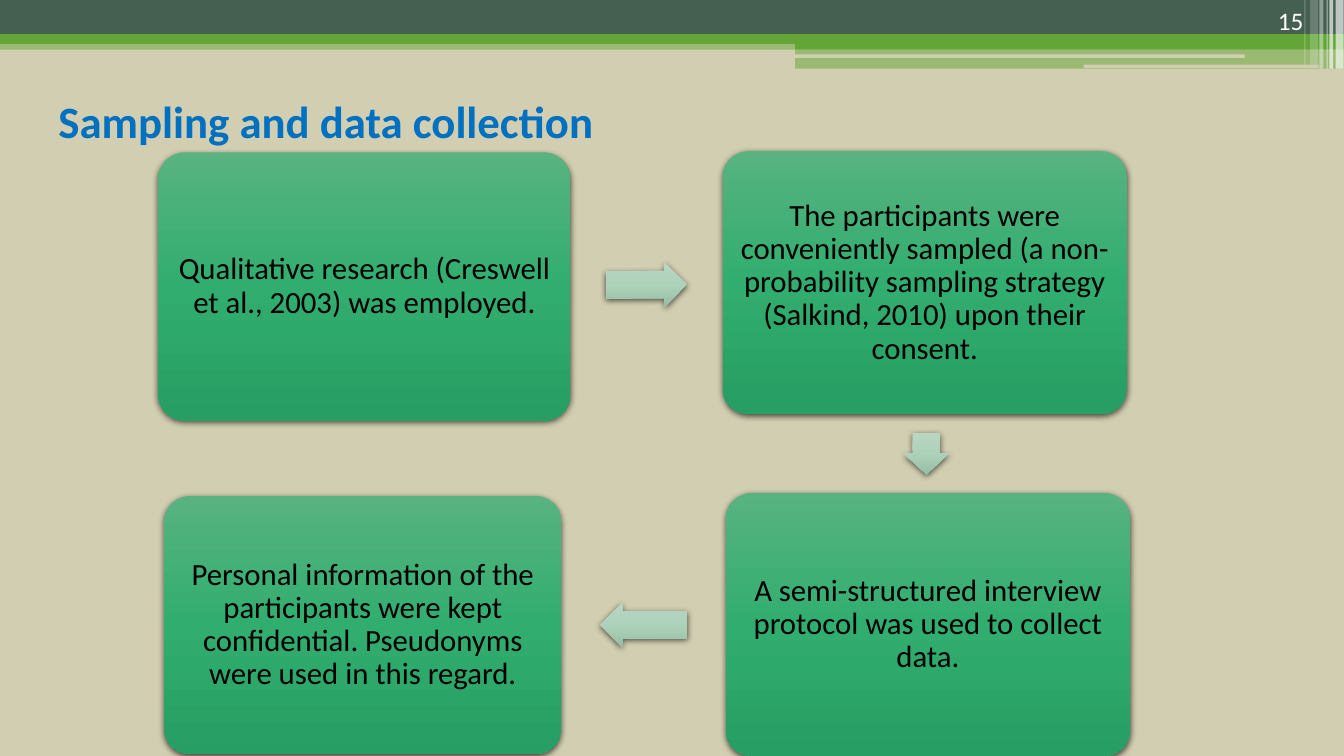
from copy import deepcopy
from dataclasses import dataclass
from itertools import pairwise
from math import atan2, degrees

from lxml import etree
from pptx import Presentation
from pptx.dml.color import RGBColor
from pptx.enum import shapes, text
from pptx.oxml.ns import qn
from pptx.util import Cm, Pt


@dataclass(frozen=True)
class Theme:
    font: str = "Calibri"
    paper: str = "D2CEB1"
    dark: str = "455F51"
    green: str = "63A537"
    white: str = "FFFFFF"
    ink: str = "000000"
    title: str = "0070C0"
    card: tuple = ("58B380", "31AD6F", "279E63")
    arrow: tuple = ("B9D6C3", "ADD2BA", "97BDA5")
    title_size: int = 32
    card_size: int = 22
    number_size: int = 18


THEME = Theme()
SLIDE = (0, 0, 33.87, 19.05)
SHAPE = shapes.MSO_SHAPE
ALIGN = text.PP_ALIGN
ANCHOR = text.MSO_ANCHOR

CARDS = [
    ((3.99, 3.84, 10.39, 6.76),
     "Qualitative research (Creswell et al., 2003) was employed."),
    ((18.21, 3.81, 10.19, 6.63),
     "The participants were conveniently sampled (a non-probability sampling "
     "strategy (Salkind, 2010) upon their consent."),
    ((18.29, 12.42, 10.19, 6.63),
     "A semi-structured interview protocol was used to collect data."),
    ((4.14, 12.5, 10.01, 6.5),
     "Personal information of the participants were kept confidential. "
     "Pseudonyms were used in this regard."),
]


def add_block(slide, kind, box):
    s = slide.shapes.add_shape(kind, *map(Cm, box))
    s.shadow.inherit = False
    s.line.fill.background()
    return s


def add_band(slide, box, color, opacity=100, kind=SHAPE.RECTANGLE):
    s = add_block(slide, kind, box)
    s.fill.solid()
    s.fill.fore_color.rgb = RGBColor.from_string(color)
    if opacity < 100:
        clr = s.fill._xPr.find(".//" + qn("a:srgbClr"))
        etree.SubElement(clr, qn("a:alpha"), val=str(opacity * 1000))


def shade(s, colors):
    """Give a shape a three-stop vertical gradient and a soft shadow below."""
    s.fill.gradient()
    s.fill.gradient_angle = 270
    sp_pr = s.element.spPr
    sp_pr.find(qn("a:gradFill")).set("rotWithShape", "0")
    stops = sp_pr.find(".//" + qn("a:gsLst"))
    stops.insert(1, deepcopy(stops[0]))
    for i, (stop, color) in enumerate(zip(s.fill.gradient_stops, colors)):
        stop.color.rgb = RGBColor.from_string(color)
        stop.position = i / 2
    shadow = etree.SubElement(
        sp_pr.find(qn("a:effectLst")), qn("a:outerShdw"), blurRad=str(Pt(4.5)),
        dist=str(Pt(1.5)), dir="5400000", algn="ctr", rotWithShape="0")
    clr = etree.SubElement(shadow, qn("a:srgbClr"), val=THEME.ink)
    etree.SubElement(clr, qn("a:alpha"), val="63000")


def write(s, words, size, color, align, anchor, bold=False):
    tf = s.text_frame
    tf.text = words
    tf.word_wrap = True
    tf.vertical_anchor = anchor
    p = tf.paragraphs[0]
    p.alignment = align
    f = p.runs[0].font
    f.name, f.size, f.bold = THEME.font, Pt(size), bold
    f.color.rgb = RGBColor.from_string(color)
    return tf


def add_header(slide, box, number):
    x, y, w, _ = box
    half = x + 20.04
    right = x + w
    add_band(slide, (x, y + 1.02, w, 0.23), THEME.green, 50)
    add_band(slide, (x, y, w, 0.86), THEME.dark)
    add_band(slide, (x, y + 0.86, w, 0.25), THEME.green)
    add_band(slide, (half, y + 0.99, right - half, 0.25), THEME.green)
    add_band(slide, (half, y + 1.22, right - half, 0.51), THEME.green, 50)
    for left, top, width in ((20.02, 1.37, 11.35), (27.31, 1.63, 5.92)):
        add_band(slide, (x + left, y + top, width, 0.09), THEME.paper,
                 kind=SHAPE.ROUNDED_RECTANGLE)
    for from_right, width, height, opacity in (
            (0.21, 0.2, 1.73, 65), (0.37, 0.1, 1.73, 65), (0.44, 0.03, 1.73, 60),
            (0.62, 0.1, 1.73, 40), (0.85, 0.2, 1.63, 20), (1, 0.03, 1.63, 30)):
        add_band(slide, (right - from_right, y, width, height), THEME.white, opacity)
    s = slide.shapes.add_textbox(*map(Cm, (right - 3.59, y, 2.82, 1.02)))
    write(s, number, THEME.number_size, THEME.white, ALIGN.RIGHT, ANCHOR.BOTTOM)


def add_title(slide, box, words):
    s = slide.shapes.title
    s.left, s.top, s.width, s.height = map(Cm, box)
    write(s, words, THEME.title_size, THEME.title, ALIGN.LEFT, ANCHOR.MIDDLE, True)


def add_card(slide, box, words):
    s = add_block(slide, SHAPE.ROUNDED_RECTANGLE, box)
    s.adjustments[0] = 0.1
    shade(s, THEME.card)
    tf = write(s, words, THEME.card_size, THEME.ink, ALIGN.CENTER, ANCHOR.MIDDLE)
    tf.margin_left = tf.margin_right = tf.margin_top = tf.margin_bottom = Cm(0.23)
    tf.paragraphs[0].line_spacing = 0.9


def add_arrow(slide, start, end):
    """Centre an arrow in the gap between two cards, pointing at the second."""
    def span(axis):
        """Return the centre distance, gap and arrow centre on one axis."""
        a, b = sorted((start, end), key=lambda box: box[axis])
        a_end = a[axis] + a[axis + 2]
        step = end[axis] + end[axis + 2] / 2 - start[axis] - start[axis + 2] / 2
        gap = b[axis] - a_end
        middle = (a_end + b[axis]) / 2
        if gap < 0:
            middle = start[axis] + start[axis + 2] / 2 + step / 2
        return step, gap, middle

    (dx, gap_x, cx), (dy, gap_y, cy) = span(0), span(1)
    length, thick = 0.53 * max(gap_x, gap_y), 1.14
    s = add_block(slide, SHAPE.RIGHT_ARROW,
                  (cx - length / 2, cy - thick / 2, length, thick))
    s.adjustments[0], s.adjustments[1] = 0.6, 0.5
    s.rotation = degrees(atan2(dy, dx)) % 360
    shade(s, THEME.arrow)


def add_flow(slide, box, cards):
    x, y = box[:2]
    placed = [((x + l, y + t, w, h), words) for (l, t, w, h), words in cards]
    for card_box, words in placed:
        add_card(slide, card_box, words)
    for (start, _), (end, _) in pairwise(placed):
        add_arrow(slide, start, end)


def main():
    prs = Presentation()
    prs.slide_width, prs.slide_height = map(Cm, SLIDE[2:])
    slide = prs.slides.add_slide(prs.slide_layouts.get_by_name("Title Only"))
    slide.background.fill.solid()
    slide.background.fill.fore_color.rgb = RGBColor.from_string(THEME.paper)
    add_header(slide, SLIDE, "15")
    add_title(slide, (1.22, 1.55, 30.48, 2.97), "Sampling and data collection")
    add_flow(slide, SLIDE, CARDS)
    prs.save("out.pptx")


if __name__ == "__main__":
    main()
